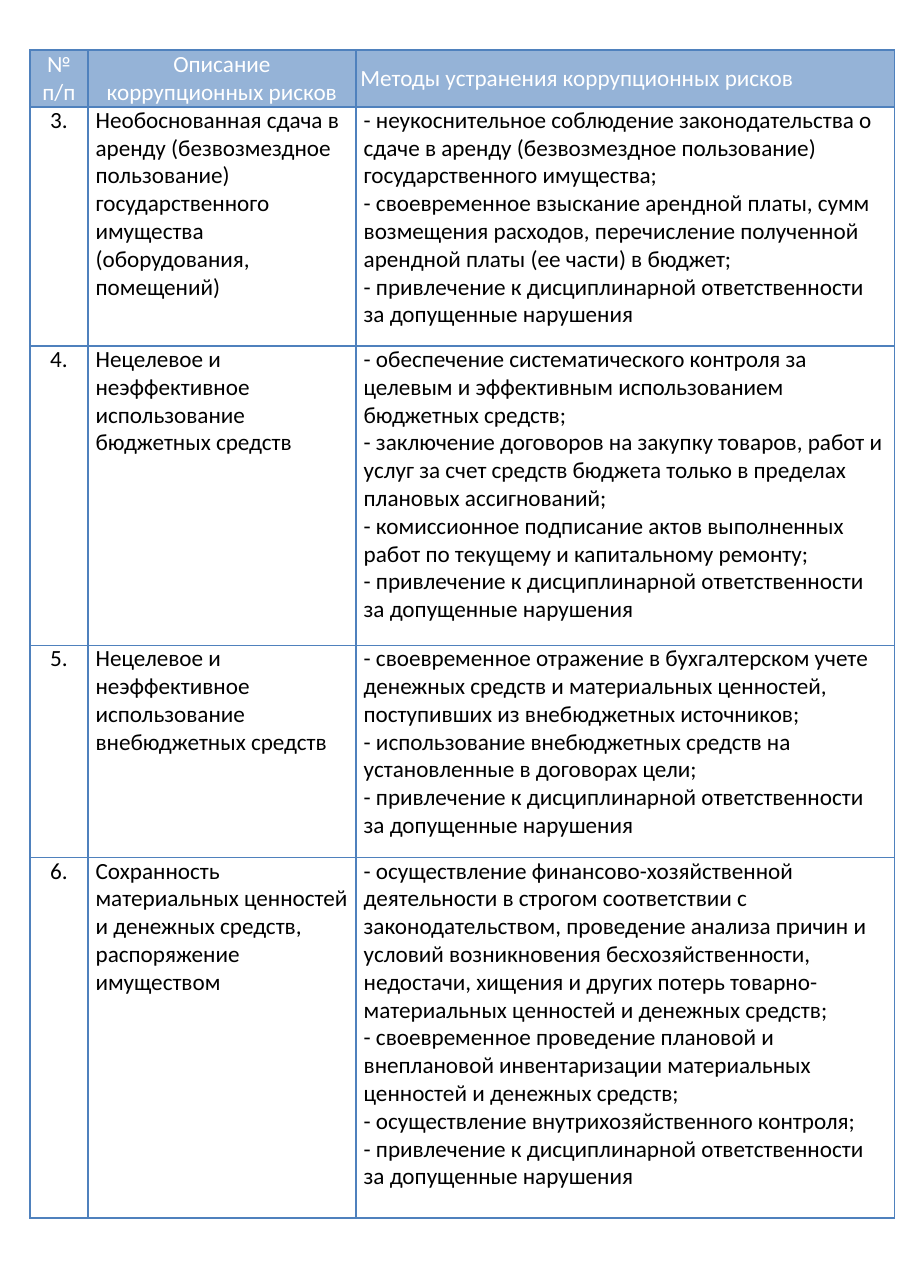
from dataclasses import dataclass

from lxml import etree
from pptx import Presentation
from pptx.dml.color import RGBColor
from pptx.enum.text import MSO_ANCHOR, PP_ALIGN
from pptx.oxml.ns import qn
from pptx.util import Inches, Pt

LEFT, CENTER = PP_ALIGN.LEFT, PP_ALIGN.CENTER
TOP, MIDDLE = MSO_ANCHOR.TOP, MSO_ANCHOR.MIDDLE


@dataclass(frozen=True)
class Theme:
    font: str = "Calibri"
    size: int = 15
    lead: int = 18
    edge: int = 1
    head: str = "95B3D7"
    line: str = "4F81BD"
    light: str = "FFFFFF"
    dark: str = "000000"


THEME = Theme()
COLS = (0.52, 2.41, 4.84)
ROWS = (0.51, 2.15, 2.69, 1.91, 3.24)
FIRST = 3  # number of the first risk on this page

HEADS = (
    ("№ п/п", CENTER),
    ("Описание коррупционных рисков", CENTER),
    ("Методы устранения коррупционных рисков", LEFT),
)
PENALTY = "привлечение к дисциплинарной ответственности за допущенные нарушения"
RISKS = (
    ("Необоснованная сдача в аренду (безвозмездное пользование) "
     "государственного имущества (оборудования, помещений)",
     ("неукоснительное соблюдение законодательства о сдаче в аренду "
      "(безвозмездное пользование) государственного имущества;",
      "своевременное взыскание арендной платы, сумм возмещения расходов, "
      "перечисление полученной арендной платы (ее части) в бюджет;")),
    ("Нецелевое и неэффективное использование бюджетных средств",
     ("обеспечение систематического контроля за целевым и эффективным "
      "использованием бюджетных средств;",
      "заключение договоров на закупку товаров, работ и услуг за счет "
      "средств бюджета только в пределах плановых ассигнований;",
      "комиссионное подписание актов выполненных работ по текущему и "
      "капитальному ремонту;")),
    ("Нецелевое и неэффективное использование внебюджетных средств",
     ("своевременное отражение в бухгалтерском учете денежных средств и "
      "материальных ценностей, поступивших из внебюджетных источников;",
      "использование внебюджетных средств на установленные в договорах цели;")),
    ("Сохранность материальных ценностей и денежных средств, "
     "распоряжение имуществом",
     ("осуществление финансово-хозяйственной деятельности в строгом "
      "соответствии с законодательством, проведение анализа причин и условий "
      "возникновения бесхозяйственности, недостачи, хищения и других потерь "
      "товарно-материальных ценностей и денежных средств;",
      "своевременное проведение плановой и внеплановой инвентаризации "
      "материальных ценностей и денежных средств;",
      "осуществление внутрихозяйственного контроля;")),
)


def add_edges(cell):
    props = cell._tc.get_or_add_tcPr()
    for pos, side in enumerate(("a:lnL", "a:lnR", "a:lnT", "a:lnB")):
        line = etree.Element(qn(side), w=str(Pt(THEME.edge)))
        fill = etree.SubElement(line, qn("a:solidFill"))
        etree.SubElement(fill, qn("a:srgbClr"), val=THEME.line)
        props.insert(pos, line)


def fill_cell(cell, text, align, pad, color, anchor=TOP, lead=None, fill=None):
    cell.margin_left = cell.margin_right = Inches(pad)
    cell.margin_top = cell.margin_bottom = 0
    cell.vertical_anchor = anchor
    if fill:
        cell.fill.solid()
        cell.fill.fore_color.rgb = RGBColor.from_string(fill)
    else:
        cell.fill.background()
    add_edges(cell)
    cell.text_frame.text = text
    for para in cell.text_frame.paragraphs:
        para.alignment = align
        if lead:
            para.line_spacing = Pt(lead)
        for run in para.runs:
            run.font.name = THEME.font
            run.font.size = Pt(THEME.size)
            run.font.bold = False
            run.font.color.rgb = RGBColor.from_string(color)


def fill_head(table):
    for col, (text, align) in enumerate(HEADS):
        fill_cell(table.cell(0, col), text, align, 0.04, THEME.light,
                  anchor=MIDDLE, fill=THEME.head)


def fill_risk(table, row, risk, steps):
    methods = "\n".join(f"- {step}" for step in (*steps, PENALTY))
    parts = (
        (f"{FIRST + row - 1}.", CENTER, 0.04),
        (risk, LEFT, 0.07),
        (methods, LEFT, 0.07),
    )
    for col, (text, align, pad) in enumerate(parts):
        fill_cell(table.cell(row, col), text, align, pad, THEME.dark,
                  lead=THEME.lead)


def add_risks(slide, left, top):
    """Place the table of risks with its corner at left, top in inches."""
    frame = slide.shapes.add_table(
        len(ROWS), len(COLS), Inches(left), Inches(top),
        Inches(sum(COLS)), Inches(sum(ROWS)))
    table = frame.table
    table.horz_banding = False
    for col, width in zip(table.columns, COLS):
        col.width = Inches(width)
    for row, height in zip(table.rows, ROWS):
        row.height = Inches(height)
    fill_head(table)
    for row, (risk, steps) in enumerate(RISKS, 1):
        fill_risk(table, row, risk, steps)


def main():
    deck = Presentation()
    deck.slide_width, deck.slide_height = Inches(8.27), Inches(11.58)
    slide = deck.slides.add_slide(deck.slide_layouts[6])
    add_risks(slide, 0.27, 0.45)
    deck.save("out.pptx")


if __name__ == "__main__":
    main()
